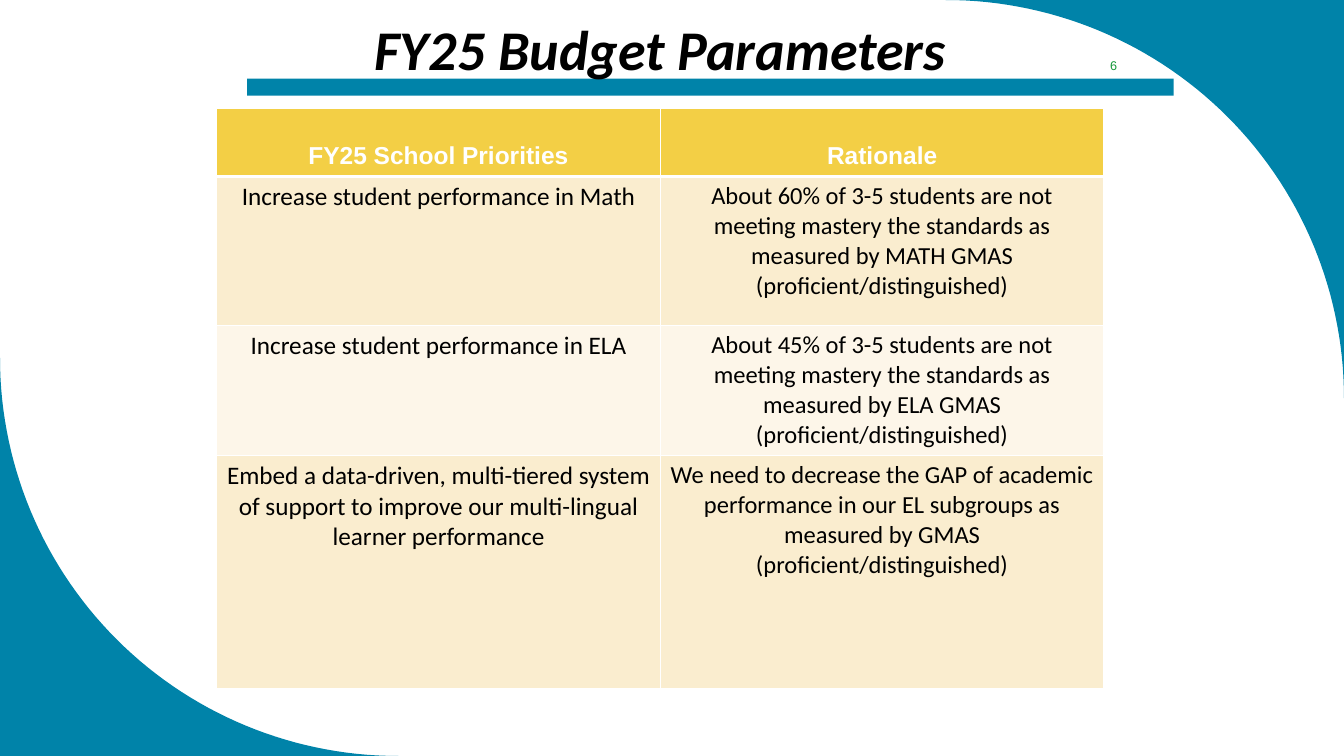
from math import cos, sin, pi
from lxml import etree
from pptx import Presentation
from pptx.util import Inches, Pt
from pptx.dml.color import RGBColor
from pptx.enum.shapes import MSO_SHAPE
from pptx.enum.text import PP_ALIGN, MSO_ANCHOR, MSO_AUTO_SIZE

RECT = MSO_SHAPE.RECTANGLE
CENTER = PP_ALIGN.CENTER
TOP, MIDDLE, BOTTOM = MSO_ANCHOR.TOP, MSO_ANCHOR.MIDDLE, MSO_ANCHOR.BOTTOM
FIXED = MSO_AUTO_SIZE.NONE
NS = "http://schemas.openxmlformats.org/drawingml/2006/main"

TITLE = "FY25 Budget Parameters"
NUMBER = "6"
HEADS = ("FY25 School Priorities", "Rationale")
GOALS = [
    ("Increase student performance in Math",
     "About 60% of 3-5 students are not meeting mastery the standards as "
     "measured by MATH GMAS (proficient/distinguished)"),
    ("Increase student performance in ELA",
     "About 45% of 3-5 students are not meeting mastery the standards as "
     "measured by ELA GMAS (proficient/distinguished)"),
    ("Embed a data-driven, multi-tiered system of support to improve our "
     "multi-lingual learner performance",
     "We need to decrease the GAP of academic performance in our EL subgroups "
     "as measured by GMAS (proficient/distinguished)"),
]
BLUE, GOLD, WHITE, BLACK, GREEN = "0083A9", "F3CF45", "FFFFFF", "000000", "159839"
BANDS = ("FAEDCF", "FDF6E9")
W, H, R = 13.33, 7.5, 3.95
COLS = (4.4, 4.4)
ROWS = (0.67, 1.48, 1.28, 2.31)
SIZES = (18, 17.5)
STEPS = 60


def color(code):
    return RGBColor.from_string(code)


def paint(shape, code):
    shape.shadow.inherit = False
    shape.fill.solid()
    shape.fill.fore_color.rgb = color(code)
    shape.line.fill.background()


def style(par, size, face, code, bold=False, italic=False):
    par.alignment = CENTER
    font = par.font
    font.size, font.name, font.bold, font.italic = Pt(size), face, bold, italic
    font.color.rgb = color(code)


def corner(slide, x, y, cx, cy, start):
    arc = [start + pi / 2 * i / STEPS for i in range(STEPS + 1)]
    pts = [(cx + R * cos(a), cy + R * sin(a)) for a in arc]
    form = slide.shapes.build_freeform(Inches(x), Inches(y))
    form.add_line_segments([(Inches(a), Inches(b)) for a, b in pts])
    paint(form.convert_to_shape(), BLUE)


def edge(cell, heavy):
    props = cell._tc.get_or_add_tcPr()
    for side in "LRTB":
        width = Pt(3 if heavy and side == "B" else 1)
        line = etree.SubElement(props, f"{{{NS}}}ln{side}", w=str(width))
        fill = etree.SubElement(line, f"{{{NS}}}solidFill")
        etree.SubElement(fill, f"{{{NS}}}srgbClr", val=WHITE)


def fill_cell(cell, code, anchor, heavy):
    edge(cell, heavy)
    cell.fill.solid()
    cell.fill.fore_color.rgb = color(code)
    cell.vertical_anchor = anchor


def add_goals(slide):
    box = [Inches(v) for v in (2.15, 1.08, sum(COLS), sum(ROWS))]
    table = slide.shapes.add_table(len(ROWS), len(COLS), *box).table
    for col, width in zip(table.columns, COLS):
        col.width = Inches(width)
    for row, height in zip(table.rows, ROWS):
        row.height = Inches(height)
    for c, head in enumerate(HEADS):
        cell = table.cell(0, c)
        fill_cell(cell, GOLD, BOTTOM, True)
        cell.text = head
        cell.margin_bottom = Inches(0.07)
        style(cell.text_frame.paragraphs[0], 17.5, "Arial", WHITE, bold=True)
    for r, goal in enumerate(GOALS):
        for c, text in enumerate(goal):
            cell = table.cell(r + 1, c)
            fill_cell(cell, BANDS[r % 2], TOP, False)
            cell.text = text
            style(cell.text_frame.paragraphs[0], SIZES[c], "Calibri", BLACK)


def main():
    deck = Presentation()
    deck.slide_width, deck.slide_height = Inches(W), Inches(H)
    slide = deck.slides.add_slide(deck.slide_layouts[5])
    shapes = slide.shapes
    corner(slide, W, 0, W - R, R, -pi / 2)
    corner(slide, 0, H, R, H - R, pi / 2)
    bar = shapes.add_shape(RECT, *[Inches(v) for v in (2.45, 0.78, 9.19, 0.17)])
    paint(bar, BLUE)

    title = shapes.title
    title.left, title.top, title.width, title.height = [
        Inches(v) for v in (3.05, 0.09, 6.99, 0.77)]
    frame = title.text_frame
    frame.text = TITLE
    frame.auto_size, frame.vertical_anchor = FIXED, TOP
    style(frame.paragraphs[0], 40, "Calibri", BLACK, True, True)
    bar._element.addnext(title._element)

    add_goals(slide)

    note = shapes.add_textbox(*[Inches(v) for v in (10.64, 0.5, 0.81, 0.3)])
    frame = note.text_frame
    frame.word_wrap, frame.vertical_anchor = True, MIDDLE
    frame.text = NUMBER
    style(frame.paragraphs[0], 9, "Arial", GREEN)
    deck.save("out.pptx")


if __name__ == "__main__":
    main()
